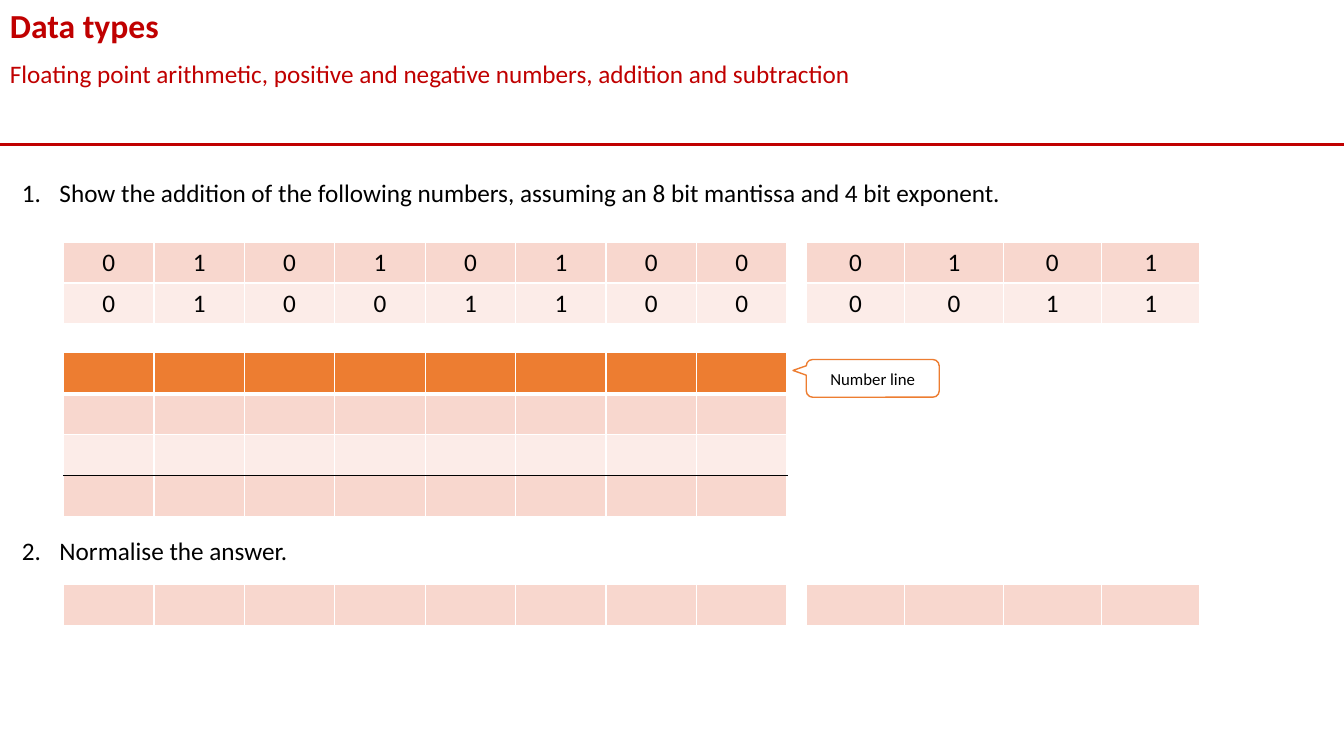
"""Build the slide on floating point addition with its bit tables."""
from lxml.etree import SubElement
from pptx import Presentation
from pptx.dml.color import RGBColor
from pptx.enum.shapes import MSO_CONNECTOR as Connector, MSO_SHAPE as Shape
from pptx.enum.text import MSO_ANCHOR as Anchor, PP_ALIGN as Align
from pptx.oxml import parse_xml
from pptx.oxml.ns import nsdecls, qn
from pptx.util import Cm, Pt

RED, ORANGE, BLACK, WHITE = "C00000", "ED7D31", "000000", "FFFFFF"
DARK, LIGHT = "F8D7CE", "FCECE8"
ROW_HEIGHT = 1.03
THIN, THICK, SUM_LINE = (WHITE, 1), (WHITE, 3), (BLACK, 1)


def color(value):
    return RGBColor.from_string(value)


def style(para, size, value, bold=False):
    para.font.name = "Calibri"
    para.font.size = Pt(size)
    para.font.bold = bold
    para.font.color.rgb = color(value)


deck = Presentation()
deck.slide_width, deck.slide_height = Cm(33.87), Cm(19.05)
page = deck.slides.add_slide(deck.slide_layouts[6])

rule = page.shapes.add_connector(Connector.STRAIGHT, 0, Cm(3.65), deck.slide_width, Cm(3.65))
rule.line.color.rgb = color(RED)
rule.line.width = Pt(2.25)
SubElement(rule._element.spPr, qn("a:effectLst"))

subtitle = "Floating point arithmetic, positive and negative numbers, addition and subtraction"
first_task = "Show the addition of the following numbers, assuming an 8 bit mantissa and 4 bit exponent."
texts = [
    (0, 1.35, 33.87, 1.03, subtitle, 18, RED, False, None),
    (0, 0, 33.87, 1.28, "Data types", 24, RED, True, None),
    (0.3, 4.35, 32.08, 1.03, first_task, 18, BLACK, False, 1),
    (0.3, 13.36, 32.08, 1.03, "Normalise the answer.", 18, BLACK, False, 2),
]
for left, top, width, height, text, size, value, bold, number in texts:
    box = page.shapes.add_textbox(Cm(left), Cm(top), Cm(width), Cm(height))
    box.text_frame.word_wrap = True
    para = box.text_frame.paragraphs[0]
    para.text = text
    if number:
        properties = para._p.get_or_add_pPr()
        properties.set("marL", str(Cm(0.95)))
        properties.set("indent", str(-Cm(0.95)))
        SubElement(properties, qn("a:buFont"), typeface="+mj-lt")
        SubElement(properties, qn("a:buAutoNum"), type="arabicPeriod", startAt=str(number))
    style(para, size, value, bold)

mantissa, exponent = (1.6, 8, 2.28), (20.32, 4, 2.48)
operand_edges, answer_edges = [THIN] * 3, [THIN] * 2
tables = [
    (mantissa, 6.1, ["01010100", "01001100"], [DARK, LIGHT], operand_edges),
    (exponent, 6.1, ["0101", "0011"], [DARK, LIGHT], operand_edges),
    (mantissa, 8.89, [""] * 4, [ORANGE, DARK, LIGHT, DARK], [THIN, THICK, THIN, SUM_LINE, THIN]),
    (mantissa, 14.73, [""], [DARK], answer_edges),
    (exponent, 14.73, [""], [DARK], answer_edges),
]
for (left, columns, column_width), top, rows, fills, edges in tables:
    frame = page.shapes.add_table(len(rows), columns, Cm(left), Cm(top),
                                  Cm(columns * column_width), Cm(len(rows) * ROW_HEIGHT))
    table = frame.table
    table.first_row = table.horz_banding = False
    for column in table.columns:
        column.width = Cm(column_width)
    for index, bits in enumerate(rows):
        table.rows[index].height = Cm(ROW_HEIGHT)
        sides = [("L", THIN), ("R", THIN), ("T", edges[index]), ("B", edges[index + 1])]
        for position in range(columns):
            cell = table.cell(index, position)
            cell.fill.solid()
            cell.fill.fore_color.rgb = color(fills[index])
            para = cell.text_frame.paragraphs[0]
            para.text = bits[position:position + 1]
            para.alignment = Align.CENTER
            style(para, 18, BLACK)
            for order, (side, (value, points)) in enumerate(sides):
                border = parse_xml(
                    f'<a:ln{side} {nsdecls("a")} w="{Pt(points)}"><a:solidFill>'
                    f'<a:srgbClr val="{value}"/></a:solidFill></a:ln{side}>')
                cell._tc.get_or_add_tcPr().insert(order, border)

callout = page.shapes.add_shape(Shape.ROUNDED_RECTANGULAR_CALLOUT,
                                Cm(20.32), Cm(9.06), Cm(3.35), Cm(0.95))
callout.shadow.inherit = False
callout.adjustments[0] = -0.6
callout.adjustments[1] = -0.21
callout.fill.solid()
callout.fill.fore_color.rgb = color(WHITE)
callout.line.color.rgb = color(ORANGE)
callout.line.width = Pt(1)
callout.text_frame.vertical_anchor = Anchor.MIDDLE
para = callout.text_frame.paragraphs[0]
para.text = "Number line"
para.alignment = Align.CENTER
style(para, 12, BLACK)

deck.save("out.pptx")
